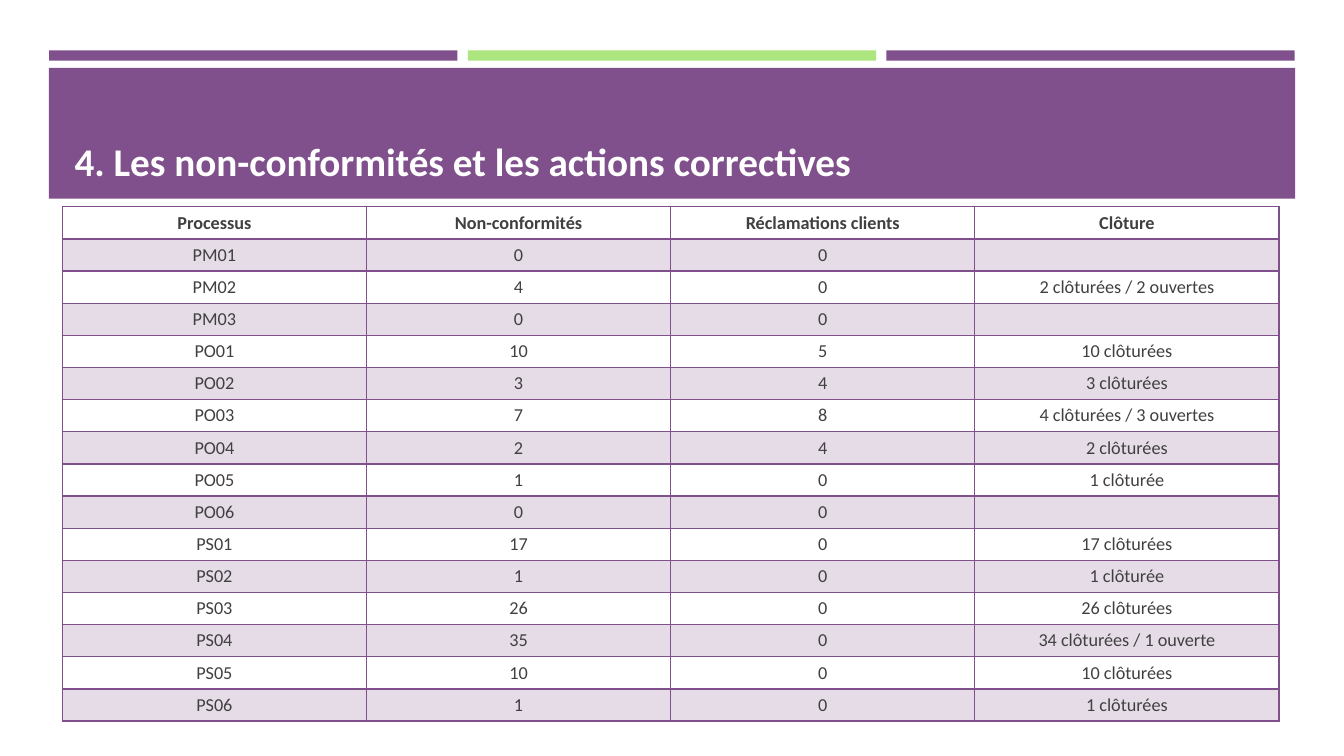
"""Build the slide on non-conformities and corrective actions."""
from dataclasses import dataclass

from lxml.etree import SubElement
from pptx import Presentation
from pptx.dml.color import RGBColor
from pptx.enum.shapes import MSO_SHAPE as Preset
from pptx.enum.text import MSO_ANCHOR as Anchor, PP_ALIGN as Align
from pptx.oxml.ns import qn
from pptx.slide import Slide
from pptx.table import _Cell as Cell
from pptx.text.text import _Paragraph as Paragraph
from pptx.util import Cm, Pt

PURPLE = RGBColor(0x7F, 0x50, 0x8B)
GREEN = RGBColor(0xAD, 0xE6, 0x7F)
WHITE = RGBColor(0xFF, 0xFF, 0xFF)
GREY = RGBColor(0x40, 0x40, 0x40)
FONT = "Calibri"
CELL_SIZE = 13
TITLE = "4. Les non-conformités et les actions correctives"
HEADER = ("Processus", "Non-conformités", "Réclamations clients", "Clôture")


@dataclass(frozen=True)
class Band:
    left: float
    top: float
    width: float
    height: float
    color: RGBColor


@dataclass(frozen=True)
class Process:
    code: str
    issues: int
    complaints: int
    closure: str = ""

    def texts(self) -> tuple[str, ...]:
        return self.code, str(self.issues), str(self.complaints), self.closure


BANDS = [
    Band(1.24 + 10.55 * index, 1.27, 10.29, 0.26, color)
    for index, color in enumerate((PURPLE, GREEN, PURPLE))
] + [Band(1.23, 1.71, 31.41, 3.3, PURPLE)]

PROCESSES = [
    Process("PM01", 0, 0),
    Process("PM02", 4, 0, "2 clôturées / 2 ouvertes"),
    Process("PM03", 0, 0),
    Process("PO01", 10, 5, "10 clôturées"),
    Process("PO02", 3, 4, "3 clôturées"),
    Process("PO03", 7, 8, "4 clôturées / 3 ouvertes"),
    Process("PO04", 2, 4, "2 clôturées"),
    Process("PO05", 1, 0, "1 clôturée"),
    Process("PO06", 0, 0),
    Process("PS01", 17, 0, "17 clôturées"),
    Process("PS02", 1, 0, "1 clôturée"),
    Process("PS03", 26, 0, "26 clôturées"),
    Process("PS04", 35, 0, "34 clôturées / 1 ouverte"),
    Process("PS05", 10, 0, "10 clôturées"),
    Process("PS06", 1, 0, "1 clôturées"),
]


def draw_band(page: Slide, band: Band) -> None:
    shape = page.shapes.add_shape(
        Preset.RECTANGLE, Cm(band.left), Cm(band.top), Cm(band.width), Cm(band.height)
    )
    shape.shadow.inherit = False
    shape.fill.solid()
    shape.fill.fore_color.rgb = band.color
    shape.line.fill.background()


def format_text(para: Paragraph, size: float, color: RGBColor, bold: bool) -> None:
    for span in para.runs:
        span.font.name = FONT
        span.font.size = Pt(size)
        span.font.bold = bold
        span.font.color.rgb = color


def draw_title(page: Slide) -> None:
    box = page.shapes.add_textbox(Cm(1.63), Cm(1.96), Cm(30.63), Cm(2.82))
    frame = box.text_frame
    frame.word_wrap = True
    frame.vertical_anchor = Anchor.BOTTOM
    frame.text = TITLE
    format_text(frame.paragraphs[0], 28, WHITE, True)


def add_border(cell: Cell, side: str, points: float) -> None:
    properties = cell._tc.get_or_add_tcPr()
    line = SubElement(properties, qn(f"a:ln{side}"), w=str(Pt(points)))
    fill = SubElement(line, qn("a:solidFill"))
    SubElement(fill, qn("a:srgbClr"), val=str(PURPLE))


def fill_cell(cell: Cell, text: str, row: int) -> None:
    cell.text = text
    cell.vertical_anchor = Anchor.MIDDLE
    para = cell.text_frame.paragraphs[0]
    para.alignment = Align.CENTER
    format_text(para, CELL_SIZE, GREY, row == 0)
    if not text:
        SubElement(para._p, qn("a:endParaRPr"), sz=str(CELL_SIZE * 100))
    for side in "LRTB":
        header_edge = (row, side) in ((0, "B"), (1, "T"))
        add_border(cell, side, 2 if header_edge else 1)
    if row % 2:
        cell.fill.solid()
        cell.fill.fore_color.rgb = PURPLE
        color = cell._tc.tcPr.find(qn("a:solidFill")).find(qn("a:srgbClr"))
        SubElement(color, qn("a:alpha"), val="20000")
    else:
        cell.fill.background()


def draw_table(page: Slide) -> None:
    rows = [HEADER] + [process.texts() for process in PROCESSES]
    row_height = Cm(0.81)
    table = page.shapes.add_table(
        len(rows), len(HEADER), Cm(1.57), Cm(5.21), Cm(30.66), row_height * len(rows)
    ).table
    table.first_row = False
    table.horz_banding = False
    for row, texts in enumerate(rows):
        for column, text in enumerate(texts):
            fill_cell(table.cell(row, column), text, row)


def main() -> None:
    deck = Presentation()
    deck.slide_width, deck.slide_height = Cm(33.87), Cm(19.05)
    page = deck.slides.add_slide(deck.slide_layouts[6])
    for band in BANDS:
        draw_band(page, band)
    draw_title(page)
    draw_table(page)
    deck.save("out.pptx")


if __name__ == "__main__":
    main()
